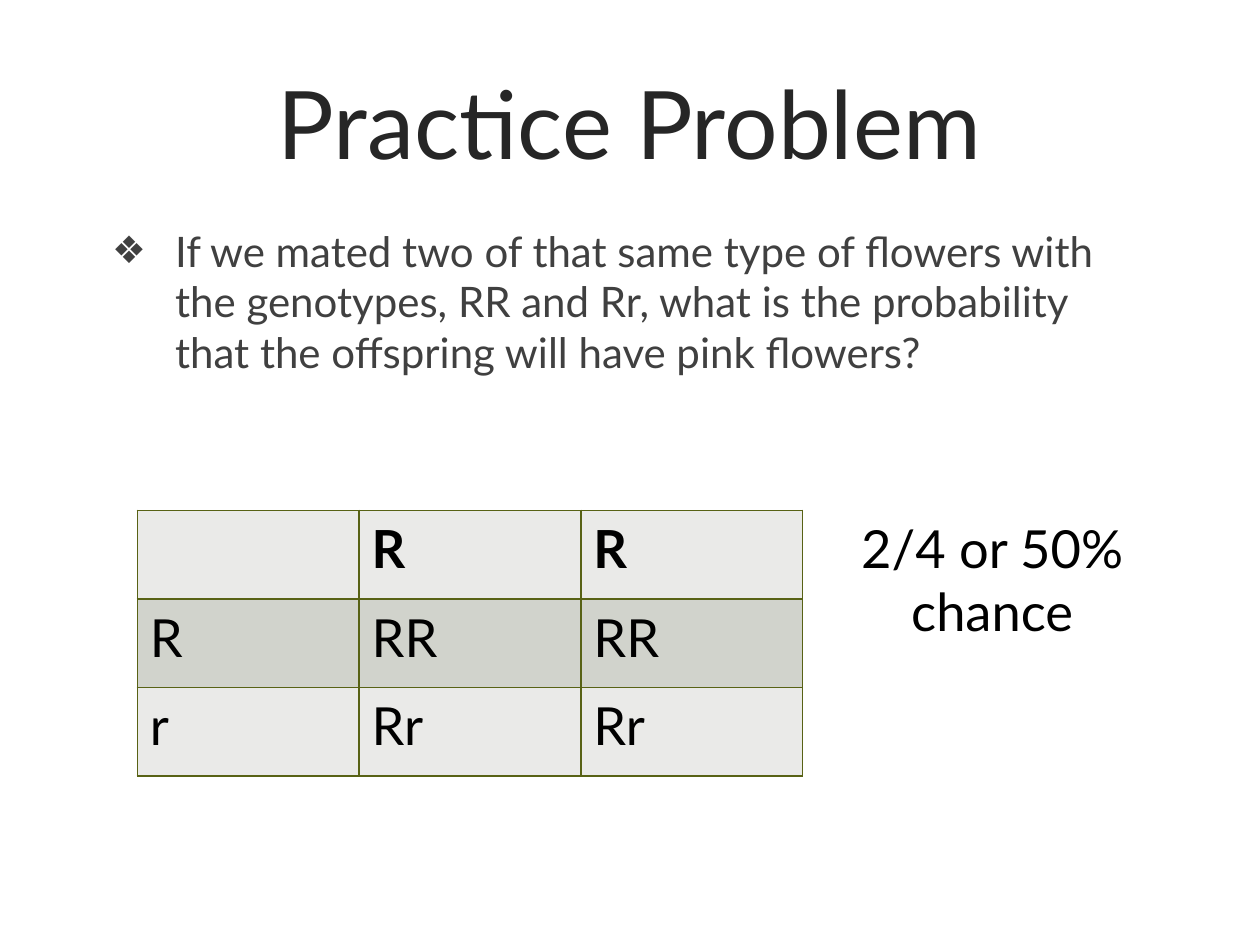
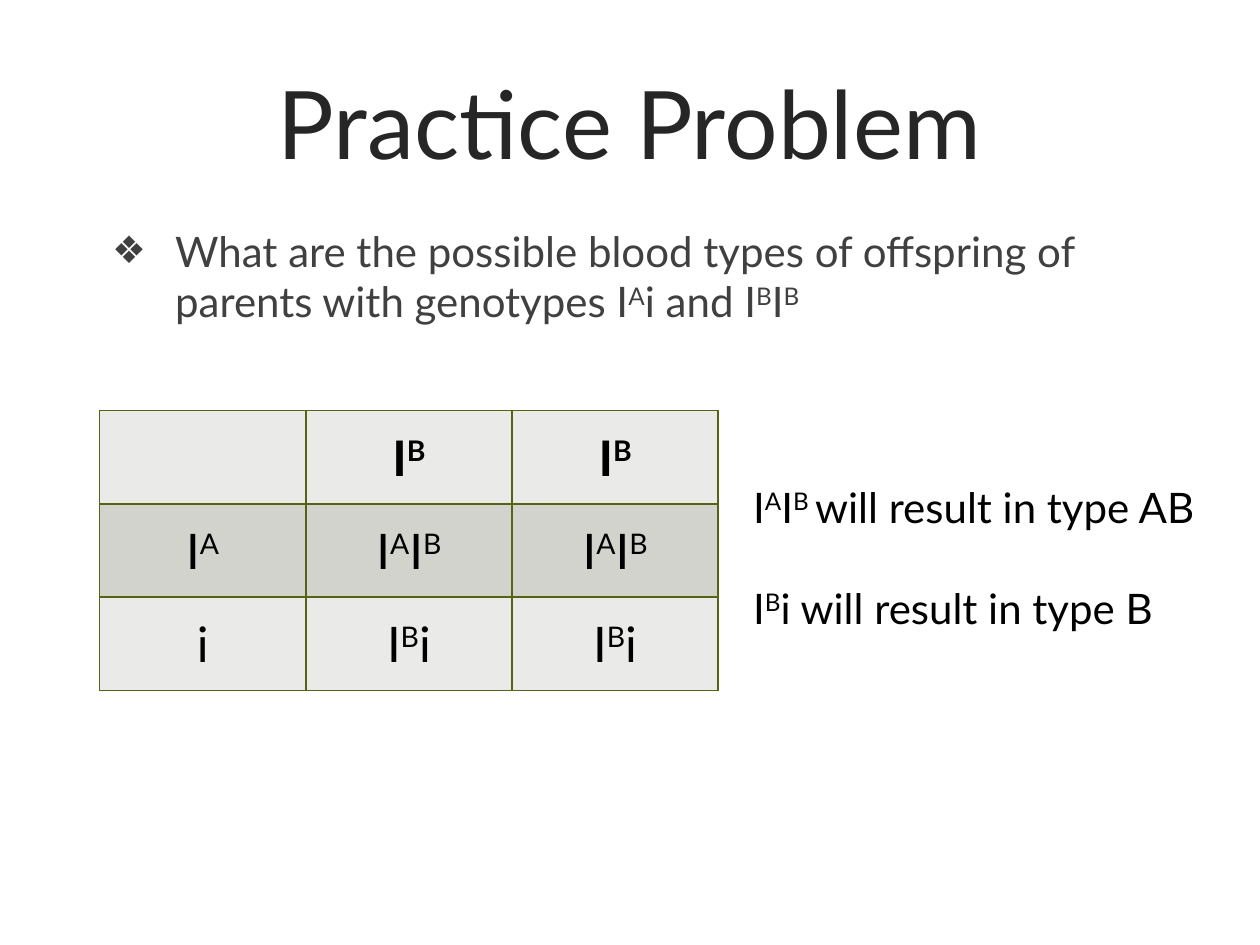
import lxml.etree
import pptx
import pptx.dml.color
import pptx.enum.text
import pptx.oxml.ns
import pptx.util

Inches = pptx.util.Inches
Pt = pptx.util.Pt
ALIGN = pptx.enum.text.PP_ALIGN
ANCHOR = pptx.enum.text.MSO_ANCHOR
qn = pptx.oxml.ns.qn

FONT = "Lato"
COLORS = {
    "title": "262626",
    "body": "404040",
    "black": "000000",
    "border": "586215",
    "light": "EAEAE8",
    "dark": "D1D3CC",
}
TITLE_BOX = (0.79, 0.34, 8.41, 1.25)
BODY_BOX = (0.79, 1.74, 8.41, 5)

PROBLEMS = [
    {
        "question": "If we mated two of that same type of flowers with the genotypes, "
                    "RR and Rr, what is the probability that the offspring will have "
                    "pink flowers?",
        "square": [["", "R", "R"], ["R", "RR", "RR"], ["r", "Rr", "Rr"]],
        "square_box": (1.09, 4.05, 5.28, 2.11),
        "square_size": 30,
        "square_align": ALIGN.LEFT,
        "square_anchor": ANCHOR.TOP,
        "answers": ["2/4 or 50% chance"],
        "answer_box": (6.55, 4.05, 2.65, 1.11),
        "answer_size": 30,
        "answer_align": ALIGN.CENTER,
    },
    {
        "question": "What are the possible blood types of offspring of parents with "
                    "genotypes I|A|i and I|B|I|B",
        "square": [
            ["", "I|B", "I|B"],
            ["I|A", "I|A|I|B", "I|A|I|B"],
            ["i", "I|B|i", "I|B|i"],
        ],
        "square_box": (0.79, 3.26, 4.91, 2.22),
        "square_size": 28,
        "square_align": ALIGN.CENTER,
        "square_anchor": ANCHOR.MIDDLE,
        "answers": ["I|A|I|B |will result in type AB", "I|B|i will result in type B"],
        "answer_box": (5.88, 3.77, 3.94, 1.72),
        "answer_size": 24,
        "answer_align": ALIGN.LEFT,
    },
]


def write_text(paragraph, text, size, color, alignment=ALIGN.LEFT, bold=False):
    """Fill a paragraph; every second part between bars is superscript."""
    paragraph.alignment = alignment
    font_values = {"name": FONT, "size": Pt(size), "bold": bold}
    for index, part in enumerate(text.split("|")):
        run = paragraph.add_run()
        run.text = part
        for name, value in font_values.items():
            setattr(run.font, name, value)
        run.font.color.rgb = pptx.dml.color.RGBColor.from_string(COLORS[color])
        if index % 2:
            run.font._element.set("baseline", "30000")


def style_cell(cell, fill):
    """Give a cell its fill and a one-point border on all four sides."""
    cell.fill.solid()
    cell.fill.fore_color.rgb = pptx.dml.color.RGBColor.from_string(COLORS[fill])
    properties = cell._tc.get_or_add_tcPr()
    for position, side in enumerate(("lnL", "lnR", "lnT", "lnB")):
        line = lxml.etree.Element(qn(f"a:{side}"), w=str(Pt(1)))
        line_fill = lxml.etree.SubElement(line, qn("a:solidFill"))
        lxml.etree.SubElement(line_fill, qn("a:srgbClr"), val=COLORS["border"])
        properties.insert(position, line)


presentation = pptx.Presentation()
presentation.slide_width = Inches(10)
presentation.slide_height = Inches(7.5)

for problem in PROBLEMS:
    slide = presentation.slides.add_slide(presentation.slide_layouts[1])
    title, body = slide.placeholders
    for shape, box, anchor in (
        (title, TITLE_BOX, ANCHOR.MIDDLE),
        (body, BODY_BOX, ANCHOR.TOP),
    ):
        shape.left, shape.top, shape.width, shape.height = map(Inches, box)
        shape.text_frame.vertical_anchor = anchor
        shape.text_frame.auto_size = pptx.enum.text.MSO_AUTO_SIZE.NONE
    write_text(title.text_frame.paragraphs[0], "Practice Problem", 54, "title", ALIGN.CENTER)

    # Question with its diamond bullet
    paragraph = body.text_frame.paragraphs[0]
    write_text(paragraph, problem["question"], 24, "body")
    paragraph.space_before = Pt(24)
    properties = paragraph._p.get_or_add_pPr()
    properties.set("marL", str(Inches(0.5)))
    properties.set("indent", str(Inches(-0.5)))
    lxml.etree.SubElement(properties, qn("a:buSzPct"), val="90000")
    lxml.etree.SubElement(properties, qn("a:buChar"), char="❖")

    # Punnett square
    square = slide.shapes.add_table(3, 3, *map(Inches, problem["square_box"])).table
    square.first_row = False
    square.horz_banding = False
    for row_index, row in enumerate(problem["square"]):
        for column_index, genotype in enumerate(row):
            cell = square.cell(row_index, column_index)
            style_cell(cell, "dark" if row_index == 1 else "light")
            cell.vertical_anchor = problem["square_anchor"]
            if genotype:
                write_text(cell.text_frame.paragraphs[0], genotype, problem["square_size"],
                           "black", problem["square_align"], bold=row_index == 0)

    # Answer beside the square
    answer_frame = slide.shapes.add_textbox(*map(Inches, problem["answer_box"])).text_frame
    answer_frame.word_wrap = True
    for index, answer in enumerate(problem["answers"]):
        paragraph = answer_frame.add_paragraph() if index else answer_frame.paragraphs[0]
        write_text(paragraph, answer, problem["answer_size"], "black", problem["answer_align"])
        if index:
            paragraph.space_before = Pt(29)

presentation.save("out.pptx")
